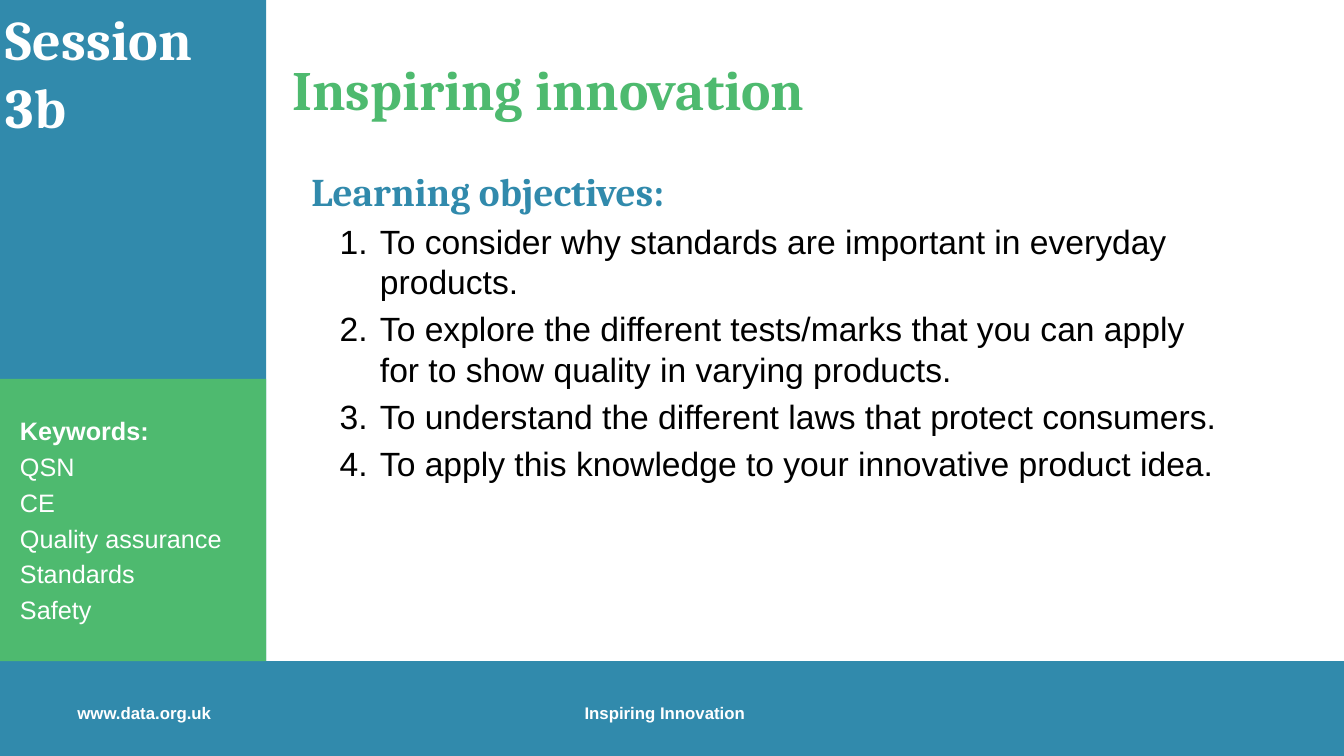
from lxml import etree
from pptx import Presentation
from pptx.dml.color import RGBColor
from pptx.enum.shapes import MSO_SHAPE
from pptx.enum.text import MSO_ANCHOR, MSO_AUTO_SIZE, PP_ALIGN
from pptx.oxml.ns import qn
from pptx.util import Inches, Pt

RECTANGLE = MSO_SHAPE.RECTANGLE
TOP, MIDDLE = MSO_ANCHOR.TOP, MSO_ANCHOR.MIDDLE
LEFT = PP_ALIGN.LEFT
NO_AUTOSIZE = MSO_AUTO_SIZE.NONE

COLORS = {"blue": "318AAC", "green": "4EBA6F", "white": "FFFFFF", "black": "000000"}
HEADING_FONT, BODY_FONT = "Cambria", "Arial"

SLIDE_WIDTH, SLIDE_HEIGHT = 13.33, 7.5
SIDEBAR_WIDTH = 2.64
FOOTER_TOP = 6.56
KEYWORDS_TOP = 3.76

OBJECTIVES = [
    "To consider why standards are important in everyday products.",
    "To explore the different tests/marks that you can apply for to show quality "
    "in varying products.",
    "To understand the different laws that protect consumers.",
    "To apply this knowledge to your innovative product idea.",
]
KEYWORDS = ["QSN", "CE", "Quality assurance", "Standards", "Safety"]


def write_text(text_frame, text, *, size, color, font=BODY_FONT, bold=False, before=0,
               after=0, margin=0, hanging=0, numbered=False):
    """Fill the empty first paragraph, or append one, and format it."""
    paragraph = text_frame.paragraphs[0]
    if paragraph.runs:
        paragraph = text_frame.add_paragraph()
    properties = paragraph._p.get_or_add_pPr()
    properties.set("marL", str(Inches(margin)))
    properties.set("indent", str(Inches(-hanging)))
    paragraph.alignment = LEFT
    paragraph.space_before = Pt(before)
    paragraph.space_after = Pt(after)
    if numbered:
        etree.SubElement(properties, qn("a:buFont"), typeface="+mj-lt")
        etree.SubElement(properties, qn("a:buAutoNum"), type="arabicPeriod")
    run = paragraph.add_run()
    run.text = text
    run.font.name = font
    run.font.size = Pt(size)
    run.font.bold = bold
    run.font.color.rgb = RGBColor.from_string(COLORS[color])


class SlideBuilder:
    def __init__(self, slide):
        self.slide = slide

    def prepare_frame(self, shape, anchor=TOP, inset=0.1):
        text_frame = shape.text_frame
        text_frame.word_wrap = True
        text_frame.auto_size = NO_AUTOSIZE
        text_frame.vertical_anchor = anchor
        text_frame.margin_left = text_frame.margin_right = Inches(inset)
        return text_frame

    def add_panel(self, left, top, width, height, color):
        panel = self.slide.shapes.add_shape(RECTANGLE, *map(Inches, (left, top, width, height)))
        panel.shadow.inherit = False
        panel.fill.solid()
        panel.fill.fore_color.rgb = RGBColor.from_string(COLORS[color])
        panel.line.fill.background()
        return panel

    def add_text_box(self, left, top, width, height, inset=0.1):
        box = self.slide.shapes.add_textbox(*map(Inches, (left, top, width, height)))
        return self.prepare_frame(box, inset=inset)

    def place_title(self, text, left, top, width, height, **text_format):
        title = self.slide.shapes.title
        title.left, title.top, title.width, title.height = map(Inches, (left, top, width, height))
        write_text(self.prepare_frame(title), text, **text_format)


def main():
    presentation = Presentation()
    presentation.slide_width = Inches(SLIDE_WIDTH)
    presentation.slide_height = Inches(SLIDE_HEIGHT)
    builder = SlideBuilder(presentation.slides.add_slide(presentation.slide_layouts[5]))

    builder.place_title("Inspiring innovation", 2.8, 0.5, 6.15, 0.75,
                        size=39.6, color="green", font=HEADING_FONT, bold=True)

    builder.add_panel(0, FOOTER_TOP, SLIDE_WIDTH, SLIDE_HEIGHT - FOOTER_TOP, "blue")
    for left, text in ((0.67, "www.data.org.uk"), (5.7, "Inspiring Innovation")):
        footer = builder.add_text_box(left, 6.92, 2.27, 0.35)
        write_text(footer, text, size=12, color="white", bold=True)

    builder.add_panel(0, 0, SIDEBAR_WIDTH, FOOTER_TOP, "blue")
    session = builder.add_text_box(0, 0, SIDEBAR_WIDTH, 1.45, inset=0.06)
    write_text(session, "Session 3b", size=40, color="white", font=HEADING_FONT, bold=True)

    objectives = builder.add_text_box(2.99, 1.61, 9.28, 4.95)
    write_text(objectives, "Learning objectives:", size=28, color="blue", font=HEADING_FONT,
               bold=True, margin=0.67, hanging=0.67)
    for objective in OBJECTIVES:
        write_text(objectives, objective, size=24, color="black", before=4.8,
                   margin=0.68, hanging=0.4, numbered=True)

    keyword_panel = builder.add_panel(0, KEYWORDS_TOP, SIDEBAR_WIDTH,
                                      FOOTER_TOP - KEYWORDS_TOP, "green")
    keywords = builder.prepare_frame(keyword_panel, MIDDLE)
    for text in ["Keywords:", *KEYWORDS]:
        write_text(keywords, text, size=18, color="white", bold=text == "Keywords:",
                   after=4, margin=0.1)

    presentation.save("out.pptx")


if __name__ == "__main__":
    main()
